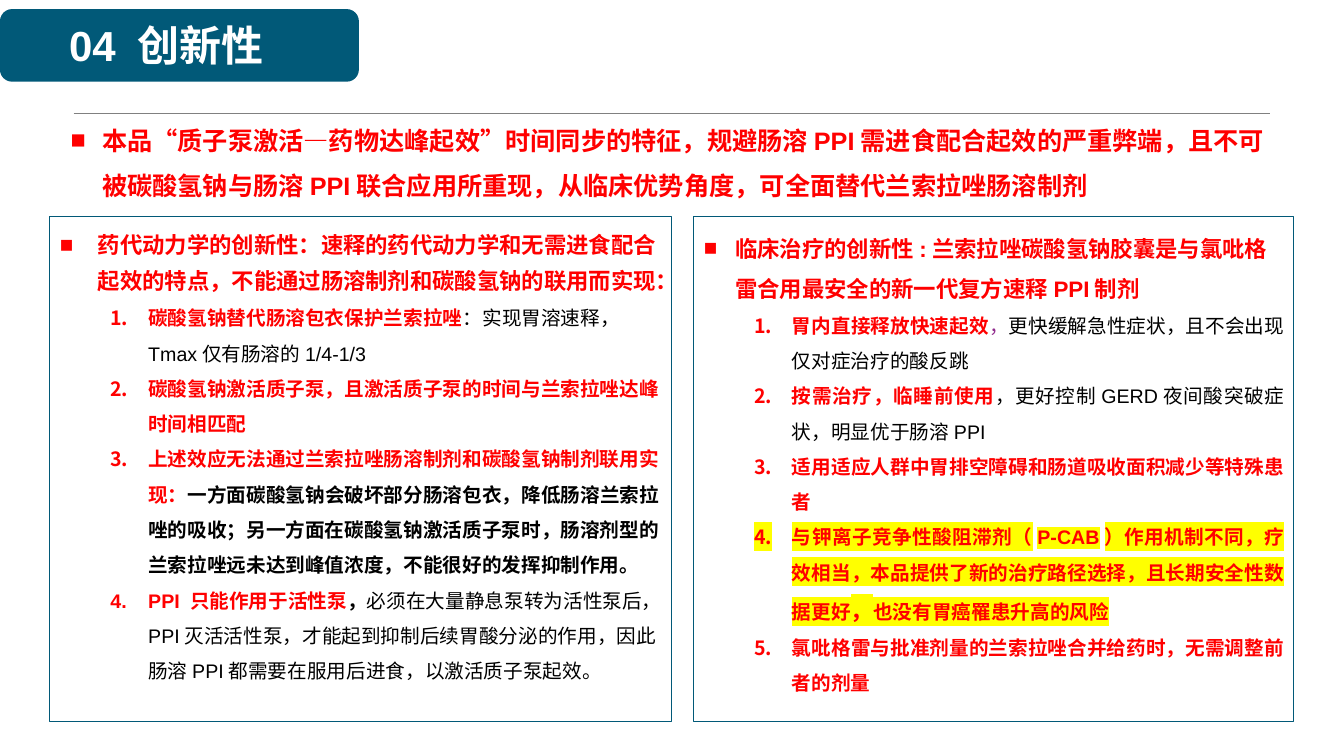
from dataclasses import dataclass

from lxml import etree
from pptx import Presentation
from pptx.dml.color import RGBColor
from pptx.enum.lang import MSO_LANGUAGE_ID
from pptx.enum.shapes import MSO_CONNECTOR, MSO_SHAPE
from pptx.enum.text import MSO_ANCHOR, MSO_AUTO_SIZE, PP_ALIGN
from pptx.oxml.ns import qn
from pptx.util import Inches, Pt

CHINESE = MSO_LANGUAGE_ID.SIMPLIFIED_CHINESE
STRAIGHT = MSO_CONNECTOR.STRAIGHT
ROUNDED = MSO_SHAPE.ROUNDED_RECTANGLE
TOP, MIDDLE = MSO_ANCHOR.TOP, MSO_ANCHOR.MIDDLE
FIXED = MSO_AUTO_SIZE.NONE
LEFT, CENTER, JUSTIFY = PP_ALIGN.LEFT, PP_ALIGN.CENTER, PP_ALIGN.JUSTIFY

RED = RGBColor(0xFF, 0x00, 0x00)
BLACK = RGBColor(0x00, 0x00, 0x00)
WHITE = RGBColor(0xFF, 0xFF, 0xFF)
TEAL = RGBColor(0x01, 0x59, 0x78)
GRAY = RGBColor(0x80, 0x80, 0x80)
PURPLE = RGBColor(0x91, 0x2C, 0x8D)
YELLOW = RGBColor(0xFF, 0xFF, 0x00)

FONT = "Arial"
COLS, ROWS = 133.3, 75
CELL = Inches(0.1)


@dataclass
class Box:
    """A place on the grid, in columns and rows."""
    col: float
    row: float
    wide: float
    high: float


@dataclass
class Span:
    text: str
    color: RGBColor = RED
    bold: bool = True
    size: int = 14
    mark: RGBColor | None = None


@dataclass
class Panel:
    slot: int
    box: Box
    foot: float
    head: str
    hang: float
    space: float | Pt
    align: PP_ALIGN
    items: list[list[Span]]


def plain(text: str) -> Span:
    return Span(text, BLACK, False)


def glow(text: str, size: int = 14) -> Span:
    return Span(text, size=size, mark=YELLOW)


LEAD = ("本品“质子泵激活—药物达峰起效”时间同步的特征，规避肠溶PPI需进食配合起效的严重弊端，"
        "且不可被碳酸氢钠与肠溶PPI联合应用所重现，从临床优势角度，可全面替代兰索拉唑肠溶制剂")

PANELS = [
    Panel(2, Box(4.95, 21.45, 61.7, 50.1), 3.8,
          "药代动力学的创新性：速释的药代动力学和无需进食配合起效的特点，"
          "不能通过肠溶制剂和碳酸氢钠的联用而实现：", 3.75, Pt(26), LEFT, [
              [Span("碳酸氢钠替代肠溶包衣保护兰索拉唑"),
               plain("：实现胃溶速释， Tmax仅有肠溶的1/4-1/3")],
              [Span("碳酸氢钠激活质子泵，且激活质子泵的时间与兰索拉唑达峰时间相匹配")],
              [Span("上述效应无法通过兰索拉唑肠溶制剂和碳酸氢钠制剂联用实现："),
               Span("一方面碳酸氢钠会破坏部分肠溶包衣，降低肠溶兰索拉唑的吸收；"
                    "另一方面在碳酸氢钠激活质子泵时，肠溶剂型的兰索拉唑远未达到峰值浓度，"
                    "不能很好的发挥抑制作用。", BLACK)],
              [Span("PPI 只能作用于活性泵"), Span("，", BLACK),
               plain("必须在大量静息泵转为活性泵后，PPI灭活活性泵，才能起到抑制后续胃酸分泌的作用，"
                     "因此肠溶PPI都需要在服用后进食，以激活质子泵起效。")],
          ]),
    Panel(4, Box(68.8, 21.45, 59.5, 50.1), 2.6,
          "临床治疗的创新性:兰索拉唑碳酸氢钠胶囊是与氯吡格雷合用最安全的新一代复方速释PPI制剂",
          3.13, 1.5, JUSTIFY, [
              [Span("胃内直接释放快速起效"), Span("，", PURPLE, False),
               plain("更快缓解急性症状，且不会出现仅对症治疗的酸反跳")],
              [Span("按需治疗，临睡前使用"),
               plain("，更好控制GERD夜间酸突破症状，明显优于肠溶PPI")],
              [Span("适用适应人群中胃排空障碍和肠道吸收面积减少等特殊患者")],
              [glow("与钾离子竞争性酸阻滞剂（P-CAB）作用机制不同，疗效相当，"
                    "本品提供了新的治疗路径选择，且长期安全性数据更好"),
               glow("，", 16), glow("也没有胃癌罹患升高的风险")],
              [Span("氯吡格雷与批准剂量的兰索拉唑合并给药时，无需调整前者的剂量")],
          ]),
]


def place(shape, box: Box) -> None:
    shape.left, shape.top = int(box.col * CELL), int(box.row * CELL)
    shape.width, shape.height = int(box.wide * CELL), int(box.high * CELL)


def frame(shape, box: Box, anchor: MSO_ANCHOR):
    place(shape, box)
    text = shape.text_frame
    text.word_wrap = True
    text.auto_size = FIXED
    text.vertical_anchor = anchor
    return text


def write(para, spans: list[Span]) -> None:
    for span in spans:
        run = para.add_run()
        run.text = span.text
        font = run.font
        font.name, font.size, font.bold = FONT, Pt(span.size), span.bold
        font.color.rgb = span.color
        font.language_id = CHINESE
        if span.mark is not None:
            mark = etree.Element(qn("a:highlight"))
            etree.SubElement(mark, qn("a:srgbClr")).set("val", str(span.mark))
            run._r.rPr.find(qn("a:solidFill")).addnext(mark)


def listed(para, left: float, hang: float, space: float | Pt,
           number: bool = False) -> None:
    """Give a paragraph its indent, line spacing and bullet."""
    para.line_spacing = space
    para.space_before = para.space_after = Pt(0)
    props = para._p.get_or_add_pPr()
    props.set("marL", str(int(left * CELL)))
    props.set("indent", str(int(-hang * CELL)))
    etree.SubElement(props, qn("a:buFont")).set("typeface", FONT)
    if number:
        etree.SubElement(props, qn("a:buAutoNum")).set("type", "arabicPeriod")
    else:
        etree.SubElement(props, qn("a:buChar")).set("char", "■")


def panel(shape, data: Panel) -> None:
    text = frame(shape, data.box, MIDDLE)
    text.margin_bottom = int(data.foot * CELL)
    text.margin_right = int(0.9 * CELL)
    shape.line.color.rgb = TEAL
    shape.line.width = Pt(0.75)
    head = text.paragraphs[0]
    head.alignment = LEFT
    write(head, [Span(data.head, size=16)])
    listed(head, data.hang, data.hang, data.space)
    for item in data.items:
        para = text.add_paragraph()
        para.level = 1
        para.alignment = data.align
        write(para, item)
        listed(para, 8.75, 3.75, 1.5, number=True)


def backdrop(shapes) -> None:
    """Draw the rule and the title's tag behind the text."""
    rule = shapes.add_connector(STRAIGHT, int(7.3 * CELL), int(11.2 * CELL),
                                int(126 * CELL), int(11.2 * CELL))
    rule.line.color.rgb = GRAY
    rule.line.width = Pt(0.25)
    etree.SubElement(rule._element.spPr, qn("a:effectLst"))
    tag = shapes.add_shape(ROUNDED, 0, 0, CELL, CELL)
    place(tag, Box(0, 0.9, 35.6, 7.2))
    tag.shadow.inherit = False
    tag.fill.solid()
    tag.fill.fore_color.rgb = TEAL
    tag.line.fill.background()
    for shape in (tag, rule):
        shapes.element.insert(2, shape._element)


def main() -> None:
    deck = Presentation()
    deck.slide_width, deck.slide_height = int(COLS * CELL), int(ROWS * CELL)
    slide = deck.slides.add_slide(deck.slide_layouts[4])
    slots = {slot.placeholder_format.idx: slot for slot in slide.placeholders}
    backdrop(slide.shapes)

    title = frame(slots[0], Box(0, 1.4, 33, 6.1), MIDDLE).paragraphs[0]
    title.alignment = CENTER
    write(title, [Span("04 创新性", WHITE, size=30)])

    for data in PANELS:
        panel(slots[data.slot], data)

    lead = frame(slots[1], Box(6, 10.4, 121.3, 9.6), TOP).paragraphs[0]
    write(lead, [Span(LEAD, size=18)])
    listed(lead, 3.13, 3.13, 1.5)

    slide.shapes.element.remove(slots[3]._element)
    deck.save("out.pptx")


if __name__ == "__main__":
    main()
